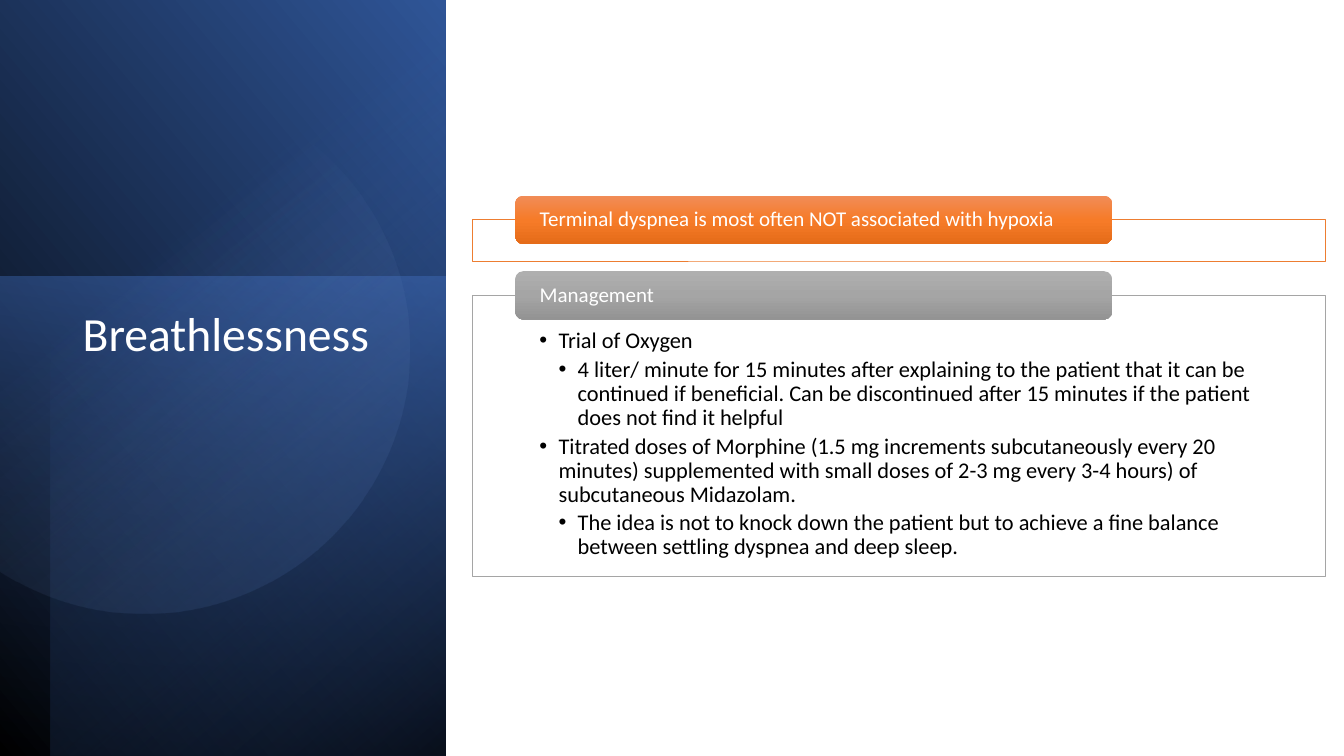
import math

import pptx
import pptx.dml.color
import pptx.enum.shapes
import pptx.enum.text
import pptx.oxml
import pptx.oxml.ns
import pptx.util
from pptx.util import Inches

TITLE = "Breathlessness"
FONT = "Calibri"
COLORS = {"white": "FFFFFF", "black": "000000", "orange": "ED7D31", "gray": "A5A5A5"}

# Gradient stops: position in %, colour, opacity in %
ORANGE_STOPS = [(0, "F18C57", 100), (50, "F67B28", 100), (100, "E56C19", 100)]
GRAY_STOPS = [(0, "AFAFAF", 100), (50, "A5A5A5", 100), (100, "939393", 100)]
CIRCLE_STOPS = [(39, "8FAADC", 0), (100, "2F5597", 26)]

# Left panel: left, top, width, height, rotation, flipped, stops, gradient angle
PANEL_LAYERS = [
    (-1.55, 1.55, 7.52, 4.42, 90, True, [(0, "000000", 100), (100, "2F5597", 100)], 310),
    (-0.17, 2.91, 4.76, 4.42, 270, False, [(0, "4472C4", 50), (100, "203864", 0)], 190),
    (-1.29, 1.79, 7.5, 3.92, 270, True, [(0, "000000", 59), (69, "4472C4", 0)], 220),
]

# Sections: heading, frame colour, heading stops, frame height, bullets (level, text)
SECTIONS = [
    ("Terminal dyspnea is most often NOT associated with hypoxia",
     "orange", ORANGE_STOPS, 0.41, []),
    ("Management", "gray", GRAY_STOPS, 2.79, [
        (1, "Trial of Oxygen"),
        (2, "4 liter/ minute for 15 minutes after explaining to the patient that it can be "
            "continued if beneficial. Can be discontinued after 15 minutes if the patient "
            "does not find it helpful"),
        (1, "Titrated doses of Morphine (1.5 mg increments subcutaneously every 20 minutes) "
            "supplemented with small doses of 2-3 mg every 3-4 hours) of subcutaneous Midazolam."),
        (2, "The idea is not to knock down the patient but to achieve a fine balance between "
            "settling dyspnea and deep sleep."),
    ]),
]
FRAME_LEFT, FRAME_WIDTH = 4.69, 8.46
HEADING_LEFT, HEADING_WIDTH, HEADING_HEIGHT = 5.11, 5.92, 0.48
SECTIONS_TOP, SECTION_GAP = 1.94, 0.1
BULLET_INDENT = 0.19

RECT = pptx.enum.shapes.MSO_SHAPE.RECTANGLE
ROUNDED = pptx.enum.shapes.MSO_SHAPE.ROUNDED_RECTANGLE
ANCHOR = pptx.enum.text.MSO_ANCHOR


def rgb(name):
    return pptx.dml.color.RGBColor.from_string(COLORS[name])


def fill_gradient(shape, stops, angle):
    """Fill with a linear gradient; angle is clockwise, in degrees."""
    shape.fill.background()
    stop_xml = "".join(
        f'<a:gs pos="{pos * 1000}"><a:srgbClr val="{color}">'
        f'<a:alpha val="{opacity * 1000}"/></a:srgbClr></a:gs>'
        for pos, color, opacity in stops)
    gradient = pptx.oxml.parse_xml(
        f'<a:gradFill {pptx.oxml.ns.nsdecls("a")} rotWithShape="1"><a:gsLst>{stop_xml}</a:gsLst>'
        f'<a:lin ang="{angle * 60000}" scaled="0"/></a:gradFill>')
    properties = shape._element.spPr
    properties.replace(properties.find(pptx.oxml.ns.qn("a:noFill")), gradient)


def add_box(slide, preset, left, top, width, height):
    box = slide.shapes.add_shape(
        preset, Inches(left), Inches(top), Inches(width), Inches(height))
    box.shadow.inherit = False
    box.line.fill.background()
    return box


def set_frame(frame, anchor, left, top, right, bottom):
    frame.word_wrap = True
    frame.vertical_anchor = anchor
    frame.margin_left, frame.margin_top = Inches(left), Inches(top)
    frame.margin_right, frame.margin_bottom = Inches(right), Inches(bottom)


def write(paragraph, text, size, color):
    paragraph.text = text
    paragraph.alignment = pptx.enum.text.PP_ALIGN.LEFT
    paragraph.line_spacing = 0.9
    paragraph.font.name = FONT
    paragraph.font.size = pptx.util.Pt(size)
    paragraph.font.color.rgb = rgb(color)


def add_bullet(paragraph, level):
    paragraph.level = level
    paragraph.space_before = pptx.util.Pt(0)
    paragraph.space_after = pptx.util.Pt(3)
    properties = paragraph._p.get_or_add_pPr()
    properties.set("marL", str(Inches(BULLET_INDENT * level)))
    properties.set("indent", str(-Inches(BULLET_INDENT)))
    properties.append(pptx.oxml.parse_xml(
        f'<a:buFont {pptx.oxml.ns.nsdecls("a")} typeface="Arial"/>'))
    properties.append(pptx.oxml.parse_xml(
        f'<a:buChar {pptx.oxml.ns.nsdecls("a")} char="•"/>'))


def add_circle(slide):
    """Draw a circle cut off at the slide's left edge, inside a rotated frame."""
    center_x, center_y, radius, rotation = 1.43, 3.47, 2.63, 101.6
    pivot_x, pivot_y = 1.81, 3.545
    cut = math.acos(-center_x / radius)
    cos, sin = math.cos(math.radians(rotation)), math.sin(math.radians(rotation))
    steps = 120
    points = []
    for step in range(steps + 1):
        angle = -cut + 2 * cut * step / steps
        dx = center_x + radius * math.cos(angle) - pivot_x
        dy = center_y + radius * math.sin(angle) - pivot_y
        points.append((Inches(pivot_x + cos * dx + sin * dy),
                       Inches(pivot_y - sin * dx + cos * dy)))
    builder = slide.shapes.build_freeform(*points[0])
    builder.add_line_segments(points[1:], close=True)
    circle = builder.convert_to_shape()
    circle.rotation = rotation
    circle.shadow.inherit = False
    circle.line.fill.background()
    fill_gradient(circle, CIRCLE_STOPS, 310)


def add_panel(slide):
    for left, top, width, height, rotation, flipped, stops, angle in PANEL_LAYERS:
        layer = add_box(slide, RECT, left, top, width, height)
        layer.rotation = rotation
        if flipped:
            layer._element.spPr.find(pptx.oxml.ns.qn("a:xfrm")).set("flipH", "1")
        fill_gradient(layer, stops, angle)
    add_circle(slide)


def add_title(slide):
    title = slide.shapes.title
    slide.shapes._spTree.append(title._element)  # in front of the panel
    title.left, title.top = Inches(0.72), Inches(3.03)
    title.width, title.height = Inches(3.15), Inches(3.36)
    set_frame(title.text_frame, ANCHOR.TOP, 0.1, 0.05, 0.1, 0.05)
    write(title.text_frame.paragraphs[0], TITLE, 34, "white")


def add_sections(slide):
    top = SECTIONS_TOP
    for heading, color, stops, height, bullets in SECTIONS:
        frame_top = top + HEADING_HEIGHT / 2
        frame = add_box(slide, RECT, FRAME_LEFT, frame_top, FRAME_WIDTH, height)
        frame.fill.solid()
        frame.fill.fore_color.rgb = rgb("white")
        frame.line.color.rgb = rgb(color)
        frame.line.width = pptx.util.Pt(0.5)
        set_frame(frame.text_frame, ANCHOR.TOP, 0.66, 0.34, 0.66, 0.12)
        for index, (level, text) in enumerate(bullets):
            body = frame.text_frame
            paragraph = body.add_paragraph() if index else body.paragraphs[0]
            write(paragraph, text, 16, "black")
            add_bullet(paragraph, level)

        tab = add_box(slide, ROUNDED, HEADING_LEFT, top, HEADING_WIDTH, HEADING_HEIGHT)
        fill_gradient(tab, stops, 90)
        set_frame(tab.text_frame, ANCHOR.MIDDLE, 0.22, 0, 0.22, 0)
        write(tab.text_frame.paragraphs[0], heading, 15, "white")
        top = frame_top + height + SECTION_GAP


def main():
    deck = pptx.Presentation()
    deck.slide_width, deck.slide_height = Inches(13.33), Inches(7.5)
    slide = deck.slides.add_slide(deck.slide_layouts[5])
    add_panel(slide)
    add_title(slide)
    add_sections(slide)
    deck.save("out.pptx")


if __name__ == "__main__":
    main()
